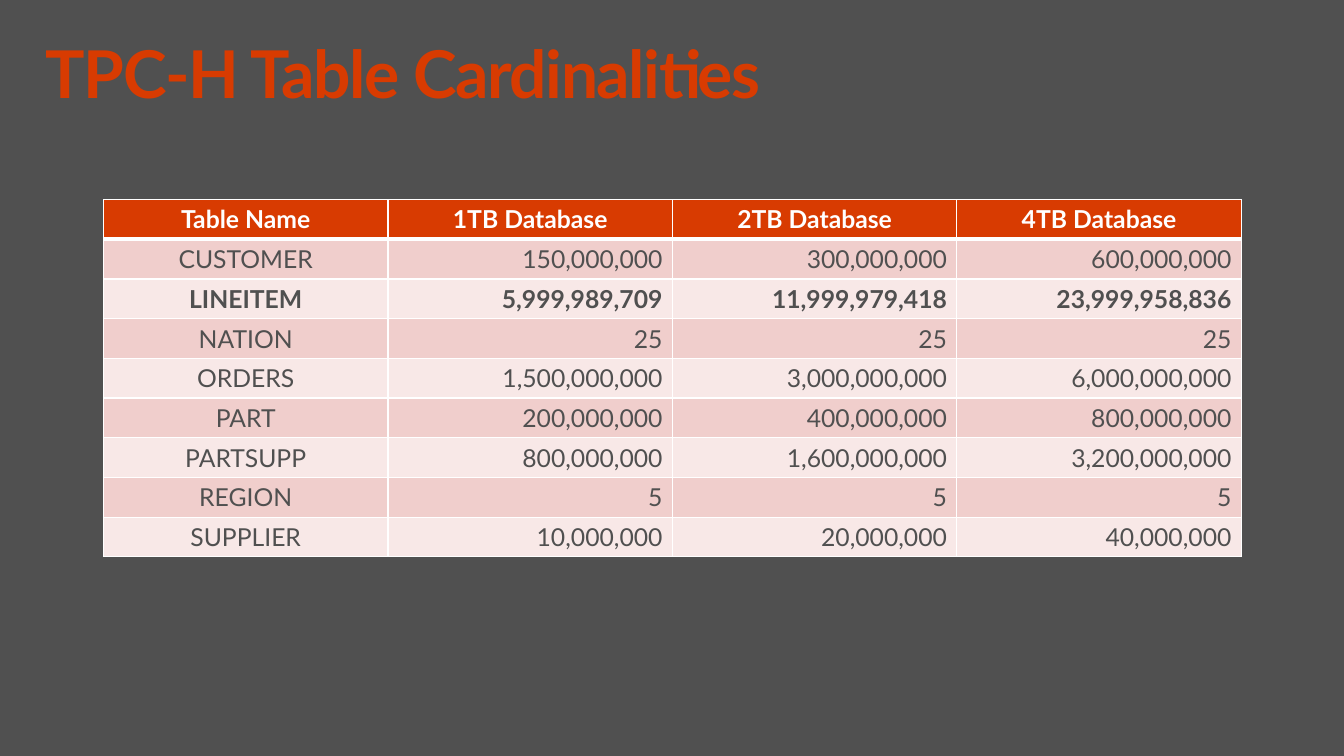
from dataclasses import dataclass

from lxml import etree
from pptx import Presentation, util as u
from pptx.dml.color import RGBColor
from pptx.enum import text
from pptx.oxml import ns


@dataclass(frozen=True)
class Theme:
    font: str = "Lato"
    accent: str = "D83B01"
    dark: str = "505050"
    white: str = "FFFFFF"
    bands: tuple[str, str] = ("F0CECC", "F8E8E7")
    title_size: int = 48
    table_size: int = 18
    thin_border: int = 1
    thick_border: int = 3


@dataclass(frozen=True)
class Cardinality:
    name: str
    rows_at_1tb: int
    scales: bool = True
    bold: bool = False

    def labels(self) -> list[str]:
        counts = [self.rows_at_1tb * (tb if self.scales else 1) for tb in TERABYTES]
        return [self.name] + [f"{count:,}" for count in counts]


THEME = Theme()
TERABYTES = (1, 2, 4)
HEADINGS = ["Table Name"] + [f"{tb}TB Database" for tb in TERABYTES]
CARDINALITIES = [
    Cardinality("CUSTOMER", 150_000_000),
    Cardinality("LINEITEM", 5_999_989_709, bold=True),
    Cardinality("NATION", 25, scales=False),
    Cardinality("ORDERS", 1_500_000_000),
    Cardinality("PART", 200_000_000),
    Cardinality("PARTSUPP", 800_000_000),
    Cardinality("REGION", 5, scales=False),
    Cardinality("SUPPLIER", 10_000_000),
]
COLUMN_WIDTH = u.Cm(7.31)
ROW_HEIGHT = u.Cm(1.02)


def set_font(font, size: int, color: str, bold: bool) -> None:
    for name, value in {"name": THEME.font, "size": u.Pt(size), "bold": bold}.items():
        setattr(font, name, value)
    font.color.rgb = RGBColor.from_string(color)


def set_borders(cell, top: int, bottom: int) -> None:
    widths = {"L": THEME.thin_border, "R": THEME.thin_border, "T": top, "B": bottom}
    properties = cell._tc.get_or_add_tcPr()
    for position, (side, width) in enumerate(widths.items()):
        line = etree.Element(ns.qn(f"a:ln{side}"), w=str(u.Pt(width)))
        fill = etree.SubElement(line, ns.qn("a:solidFill"))
        etree.SubElement(fill, ns.qn("a:srgbClr"), val=THEME.white)
        properties.insert(position, line)


def add_title(slide, wording: str) -> None:
    title = slide.shapes.add_textbox(u.Cm(0.76), u.Cm(0.81), u.Cm(33.02), u.Cm(2.54))
    frame = title.text_frame
    frame_format = {
        "word_wrap": True,
        "vertical_anchor": text.MSO_ANCHOR.TOP,
        "margin_left": u.Cm(0.41),
        "margin_right": u.Cm(0.41),
        "margin_top": u.Cm(0.25),
        "margin_bottom": u.Cm(0.25),
    }
    for name, value in frame_format.items():
        setattr(frame, name, value)
    paragraph = frame.paragraphs[0]
    paragraph.line_spacing = 0.9
    run = paragraph.add_run()
    run.text = wording
    set_font(run.font, THEME.title_size, THEME.accent, True)
    run._r.get_or_add_rPr().set("spc", "-100")


def fill_row(table, index: int, labels: list[str], bold: bool) -> None:
    header = index == 0
    background = THEME.accent if header else THEME.bands[(index - 1) % 2]
    color = THEME.white if header else THEME.dark
    top = THEME.thick_border if index == 1 else THEME.thin_border
    bottom = THEME.thick_border if header else THEME.thin_border
    for column, label in enumerate(labels):
        cell = table.cell(index, column)
        cell.fill.solid()
        cell.fill.fore_color.rgb = RGBColor.from_string(background)
        set_borders(cell, top, bottom)
        paragraph = cell.text_frame.paragraphs[0]
        centred = header or column == 0
        paragraph.alignment = text.PP_ALIGN.CENTER if centred else text.PP_ALIGN.RIGHT
        run = paragraph.add_run()
        run.text = label
        set_font(run.font, THEME.table_size, color, bold)


def add_cardinality_table(slide) -> None:
    row_count, column_count = len(CARDINALITIES) + 1, len(HEADINGS)
    table = slide.shapes.add_table(
        row_count, column_count, u.Cm(2.66), u.Cm(5.13),
        COLUMN_WIDTH * column_count, ROW_HEIGHT * row_count,
    ).table
    fill_row(table, 0, HEADINGS, True)
    for index, cardinality in enumerate(CARDINALITIES, start=1):
        fill_row(table, index, cardinality.labels(), cardinality.bold)


def main() -> None:
    deck = Presentation()
    deck.slide_width, deck.slide_height = u.Cm(34.54), u.Cm(19.43)
    slide = deck.slides.add_slide(deck.slide_layouts[6])

    # Background
    slide.background.fill.solid()
    slide.background.fill.fore_color.rgb = RGBColor.from_string(THEME.dark)

    # Title
    add_title(slide, "TPC-H Table Cardinalities")

    # Row counts by database size
    add_cardinality_table(slide)

    deck.save("out.pptx")


if __name__ == "__main__":
    main()
